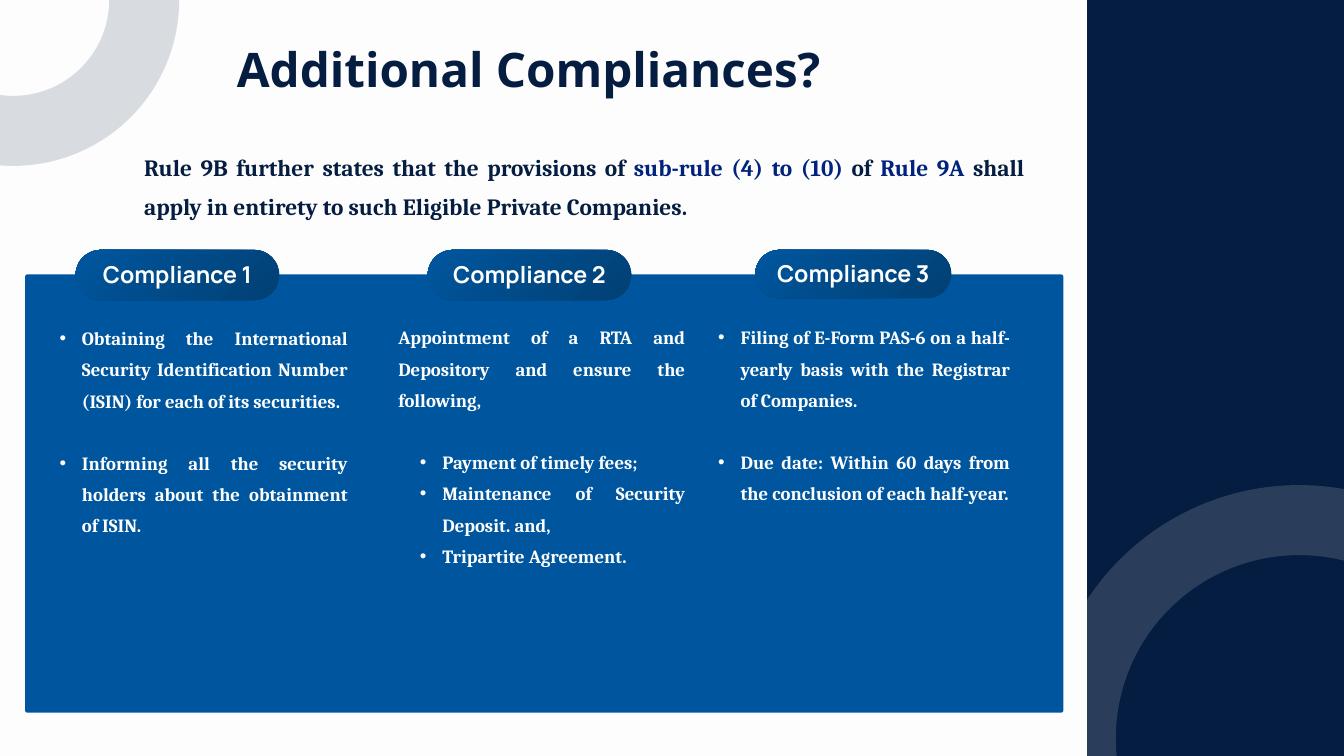
"""Build the slide on additional compliances under Rule 9B."""
from dataclasses import dataclass

from lxml import etree
from pptx import Presentation
from pptx.dml.color import RGBColor
from pptx.enum.shapes import MSO_SHAPE
from pptx.enum.text import MSO_ANCHOR, MSO_AUTO_SIZE, PP_ALIGN
from pptx.oxml.ns import qn
from pptx.shapes.autoshape import Shape
from pptx.slide import Slide
from pptx.text.text import TextFrame, _Paragraph
from pptx.util import Emu, Pt

RECTANGLE = MSO_SHAPE.RECTANGLE
ROUNDED = MSO_SHAPE.ROUNDED_RECTANGLE
OVAL = MSO_SHAPE.OVAL
TOP, MIDDLE = MSO_ANCHOR.TOP, MSO_ANCHOR.MIDDLE
CENTER, JUSTIFY = PP_ALIGN.CENTER, PP_ALIGN.JUSTIFY
NO_AUTOFIT = MSO_AUTO_SIZE.NONE

NAVY = RGBColor(0x05, 0x1D, 0x40)
ROYAL = RGBColor(0x01, 0x23, 0x7D)
BLUE = RGBColor(0x00, 0x56, 0x9E)
DEEP_BLUE = RGBColor(0x01, 0x40, 0x74)
PAPER = RGBColor(0xFD, 0xFD, 0xFD)
WHITE = RGBColor(0xFF, 0xFF, 0xFF)

HEADING_FONT, BODY_FONT, LABEL_FONT = "Open Sans", "Cambria", "Manrope"
LINE_SPACING = 1.4
SECTION_GAP = Pt(33)
BULLET_MARGIN, BULLET_HANG = 63, 32
LABEL_LIFT = 19


@dataclass(frozen=True)
class Box:
    """A place on the slide in px."""
    left: int
    top: int
    width: int
    height: int


@dataclass(frozen=True)
class Point:
    """One paragraph of a compliance column."""
    text: str
    bulleted: bool = True
    new_section: bool = False
    color: RGBColor = PAPER


@dataclass(frozen=True)
class Compliance:
    """A labelled column of points."""
    label: str
    pill: Box
    body: Box
    points: tuple[Point, ...]


INTRO = (
    ("Rule 9B further states that the provisions of ", NAVY),
    ("sub-rule (4) to (10) ", ROYAL),
    ("of ", NAVY),
    ("Rule 9A ", ROYAL),
    ("shall apply in entirety to such Eligible Private Companies.", NAVY),
)

COMPLIANCES = (
    Compliance("Compliance 1", Box(108, 357, 291, 72), Box(54, 454, 443, 362), (
        Point("Obtaining the International Security Identification Number "
              "(ISIN) for each of its securities."),
        Point("Informing all the security holders about the obtainment of ISIN.",
              new_section=True),
    )),
    Compliance("Compliance 2", Box(611, 357, 291, 72), Box(569, 453, 410, 362), (
        Point("Appointment of a RTA and Depository and ensure the following,",
              bulleted=False),
        Point("Payment of timely fees;", new_section=True),
        Point("Maintenance of Security Deposit. and,"),
        Point("Tripartite Agreement."),
    )),
    Compliance("Compliance 3", Box(1079, 357, 280, 69), Box(995, 453, 448, 317), (
        Point("Filing of E-Form PAS-6 on a half-yearly basis with the Registrar "
              "of Companies."),
        Point("Due date: Within 60 days from the conclusion of each half-year.",
              new_section=True, color=WHITE),
    )),
)


def px(length: int) -> Emu:
    """Turn px into EMU."""
    return Emu(length * 9525)


def place(box: Box) -> tuple[Emu, Emu, Emu, Emu]:
    """Give the box as EMU lengths."""
    return px(box.left), px(box.top), px(box.width), px(box.height)


def add_outline(slide: Slide, kind: MSO_SHAPE, box: Box) -> Shape:
    """Add a preset shape without shadow or line."""
    shape = slide.shapes.add_shape(kind, *place(box))
    shape.shadow.inherit = False
    shape.line.fill.background()
    return shape


def add_block(slide: Slide, kind: MSO_SHAPE, box: Box, color: RGBColor) -> Shape:
    """Add a shape of one colour."""
    shape = add_outline(slide, kind, box)
    shape.fill.solid()
    shape.fill.fore_color.rgb = color
    return shape


def add_ring(slide: Slide, box: Box, color: RGBColor) -> None:
    """Add a thick, mostly transparent ring."""
    ring = add_outline(slide, OVAL, box)
    ring.fill.background()
    ring.line.width = Pt(75)
    ring.line.color.rgb = color
    tint = ring.line._ln.find(f".//{qn('a:srgbClr')}")
    etree.SubElement(tint, qn("a:alpha"), val="15000")


def prepare(frame: TextFrame, anchor: MSO_ANCHOR = TOP) -> None:
    """Clear the insets of a text frame and wrap its text."""
    frame.margin_left = frame.margin_right = 0
    frame.margin_top = frame.margin_bottom = 0
    frame.auto_size = NO_AUTOFIT
    frame.word_wrap = True
    frame.vertical_anchor = anchor


def layout_paragraph(paragraph: _Paragraph, align: PP_ALIGN) -> None:
    """Align and space a paragraph."""
    paragraph.alignment = align
    paragraph.line_spacing = LINE_SPACING
    paragraph.space_before = Pt(0)


def add_run(paragraph: _Paragraph, text: str, font: str, size: float,
            color: RGBColor) -> None:
    """Add a bold run."""
    run = paragraph.add_run()
    run.text = text
    run.font.name = font
    run.font.size = Pt(size)
    run.font.bold = True
    run.font.color.rgb = color


def add_bullet(paragraph: _Paragraph, color: RGBColor) -> None:
    """Give a paragraph a hanging bullet."""
    paragraph.level = 1
    props = paragraph._p.get_or_add_pPr()
    props.set("marL", str(px(BULLET_MARGIN)))
    props.set("indent", str(-px(BULLET_HANG)))
    bullet_color = etree.SubElement(props, qn("a:buClr"))
    etree.SubElement(bullet_color, qn("a:srgbClr"), val=str(color))
    etree.SubElement(props, qn("a:buFont"), typeface="Arial")
    etree.SubElement(props, qn("a:buChar"), char="•")


def add_pill(slide: Slide, label: str, box: Box) -> None:
    """Add a column label on a radial gradient."""
    pill = add_outline(slide, ROUNDED, box)
    pill.adjustments[0] = 0.5
    pill.fill.gradient()
    for stop, color in zip(pill.fill.gradient_stops, (BLUE, DEEP_BLUE)):
        stop.color.rgb = color
    linear = pill._element.spPr.find(f".//{qn('a:lin')}")
    radial = etree.Element(qn("a:path"), {"path": "circle"})
    etree.SubElement(radial, qn("a:fillToRect"), r="100000", b="100000")
    linear.getparent().replace(linear, radial)
    prepare(pill.text_frame, MIDDLE)
    pill.text_frame.margin_bottom = px(LABEL_LIFT)
    paragraph = pill.text_frame.paragraphs[0]
    layout_paragraph(paragraph, CENTER)
    add_run(paragraph, label, LABEL_FONT, 24.9, WHITE)


def add_points(slide: Slide, box: Box, points: tuple[Point, ...]) -> None:
    """Add the points of one column."""
    frame = slide.shapes.add_textbox(*place(box)).text_frame
    prepare(frame)
    for index, point in enumerate(points):
        paragraph = frame.add_paragraph() if index else frame.paragraphs[0]
        layout_paragraph(paragraph, JUSTIFY)
        if point.new_section:
            paragraph.space_before = SECTION_GAP
        if point.bulleted:
            add_bullet(paragraph, point.color)
        add_run(paragraph, point.text, BODY_FONT, 20, point.color)


def add_title(slide: Slide, text: str, box: Box) -> None:
    """Move and format the title placeholder."""
    title = slide.shapes.title
    title.left, title.top, title.width, title.height = place(box)
    prepare(title.text_frame)
    paragraph = title.text_frame.paragraphs[0]
    layout_paragraph(paragraph, CENTER)
    add_run(paragraph, text, HEADING_FONT, 51, NAVY)


def add_intro(slide: Slide, box: Box) -> None:
    """Add the sentence that leads to the columns."""
    frame = slide.shapes.add_textbox(*place(box)).text_frame
    prepare(frame)
    layout_paragraph(frame.paragraphs[0], JUSTIFY)
    for text, color in INTRO:
        add_run(frame.paragraphs[0], text, BODY_FONT, 25, color)


def main() -> None:
    """Build and save the slide."""
    deck = Presentation()
    deck.slide_width, deck.slide_height = px(1920), px(1080)
    slide = deck.slides.add_slide(deck.slide_layouts[5])
    slide.background.fill.solid()
    slide.background.fill.fore_color.rgb = PAPER
    add_block(slide, RECTANGLE, Box(1553, 0, 367, 1080), NAVY)
    add_title(slide, "Additional Compliances?", Box(167, 25, 1177, 92))
    add_ring(slide, Box(-168, -187, 374, 374), NAVY)
    add_intro(slide, Box(206, 203, 1257, 113))
    add_ring(slide, Box(1544, 743, 624, 624), WHITE)
    panel = add_block(slide, ROUNDED, Box(36, 392, 1483, 626), BLUE)
    panel.adjustments[0] = 0.005
    for compliance in COMPLIANCES:
        add_pill(slide, compliance.label, compliance.pill)
        add_points(slide, compliance.body, compliance.points)
    deck.save("out.pptx")


if __name__ == "__main__":
    main()
